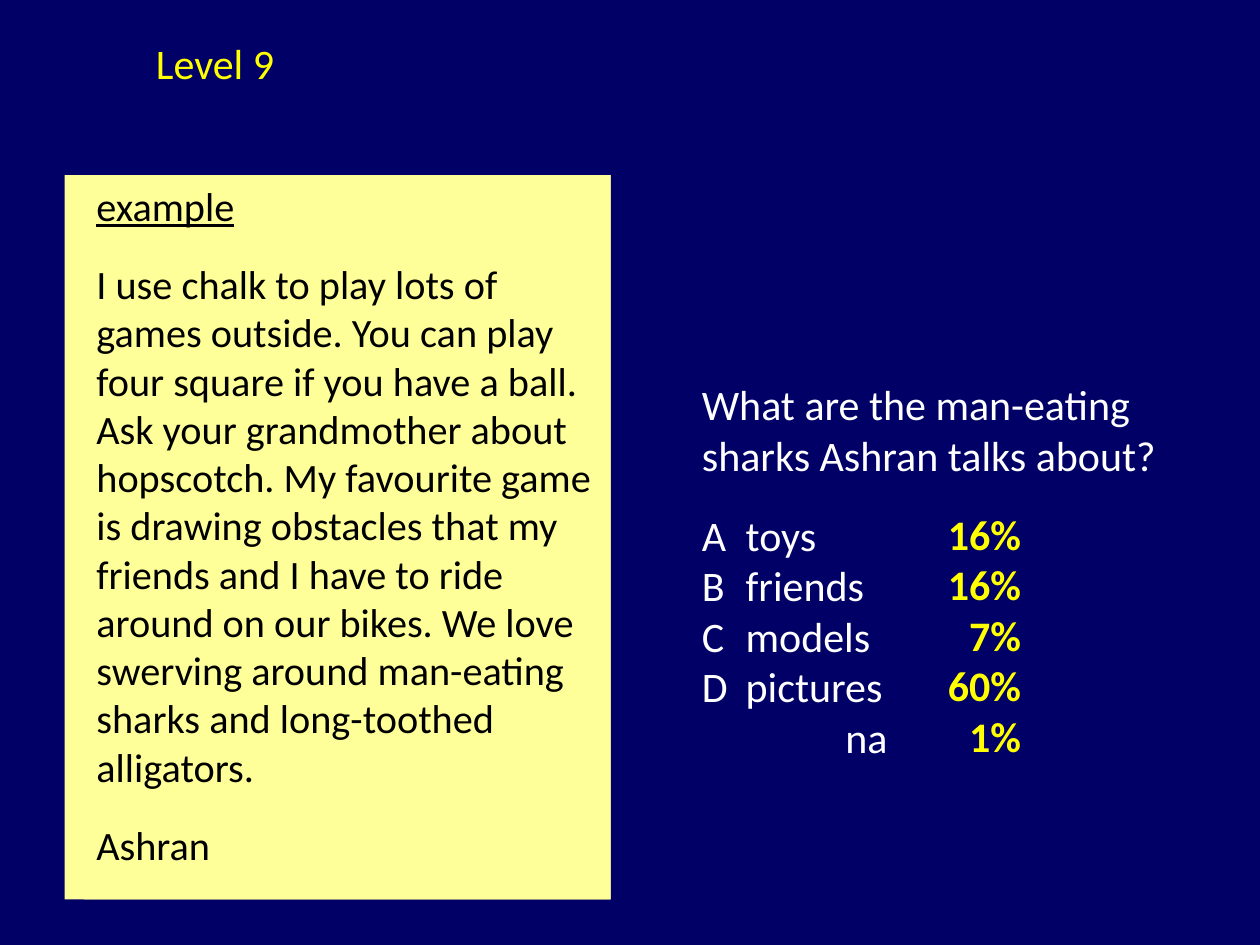
from pptx import Presentation
from pptx.dml.color import RGBColor
from pptx.enum.shapes import MSO_SHAPE
from pptx.enum.text import MSO_ANCHOR, PP_ALIGN
from pptx.util import Pt

NAVY = RGBColor(0x00, 0x00, 0x66)
CREAM = RGBColor(0xFF, 0xFF, 0x99)
YELLOW = RGBColor(0xFF, 0xFF, 0x00)
WHITE = RGBColor(0xFF, 0xFF, 0xFF)
BLACK = RGBColor(0x00, 0x00, 0x00)
RECTANGLE = MSO_SHAPE.RECTANGLE
TOP = MSO_ANCHOR.TOP
LEFT, RIGHT = PP_ALIGN.LEFT, PP_ALIGN.RIGHT

FONT = "Calibri"
SECTION_GAP = 17
LETTER_INDENT = 25
NO_ANSWER_INDENT = 82

STORY = (
    "I use chalk to play lots of games outside. You can play four square "
    "if you have a ball. Ask your grandmother about hopscotch. My favourite "
    "game is drawing obstacles that my friends and I have to ride around on "
    "our bikes. We love swerving around man-eating sharks and long-toothed "
    "alligators."
)
QUESTION = "What are the man-eating \vsharks Ashran talks about?"
OPTIONS = [("A", "toys"), ("B", "friends"), ("C", "models"), ("D", "pictures")]
RESULTS = ["16%", "16%", "7%", "60%", "1%"]


def write_lines(frame, lines, size, color, bold=False, align=LEFT):
    """Fill a text frame with one paragraph per line and return the paragraphs."""
    frame.word_wrap = True
    frame.vertical_anchor = TOP
    for index, line in enumerate(lines):
        paragraph = frame.paragraphs[0] if index == 0 else frame.add_paragraph()
        paragraph.text = line
        paragraph.alignment = align
        font = paragraph.font
        font.name, font.size, font.bold = FONT, Pt(size), bold
        font.color.rgb = color
    return frame.paragraphs


def add_text(slide, box, lines, color, **style):
    text_box = slide.shapes.add_textbox(*map(Pt, box))
    return write_lines(text_box.text_frame, lines, 24, color, **style)


def set_indent(paragraph, margin, first_line=0):
    properties = paragraph._p.get_or_add_pPr()
    properties.set("marL", str(Pt(margin)))
    properties.set("indent", str(Pt(first_line)))


def add_story(slide, left, top, width, height):
    # Backing panel with the text panel inset from its left edge
    group = slide.shapes.add_group_shape()
    for inset in (0, 11):
        panel = group.shapes.add_shape(
            RECTANGLE, Pt(left + inset), Pt(top), Pt(width - inset), Pt(height))
        panel.shadow.inherit = False
        panel.fill.solid()
        panel.fill.fore_color.rgb = CREAM
        panel.line.fill.background()
    heading, story, author = write_lines(
        panel.text_frame, ["example", STORY, "Ashran"], 23, BLACK)
    heading.font.underline = True
    for paragraph in (story, author):
        paragraph.space_before = Pt(SECTION_GAP)


def add_question(slide, left, top, width, height):
    # Question and its answer options
    options = [f"{letter}\t{answer}" for letter, answer in OPTIONS]
    paragraphs = add_text(
        slide, (left, top, width, height), [QUESTION, *options, "na"], WHITE)
    for paragraph in paragraphs[1:-1]:
        set_indent(paragraph, LETTER_INDENT, -LETTER_INDENT)
    paragraphs[1].space_before = Pt(SECTION_GAP)
    set_indent(paragraphs[-1], NO_ANSWER_INDENT)

    # Results, level with the options
    add_text(slide, (left + 136, top + 74, 60.5, 153), RESULTS, YELLOW,
             bold=True, align=RIGHT)


def main():
    presentation = Presentation()
    presentation.slide_width, presentation.slide_height = Pt(720), Pt(540)
    slide = presentation.slides.add_slide(presentation.slide_layouts[6])
    slide.background.fill.solid()
    slide.background.fill.fore_color.rgb = NAVY

    add_story(slide, 37, 100, 312, 414)
    add_question(slide, 394, 213, 290, 227)
    # Level label
    add_text(slide, (82, 18, 90, 36), ["Level 9"], YELLOW)

    presentation.save("out.pptx")


if __name__ == "__main__":
    main()
